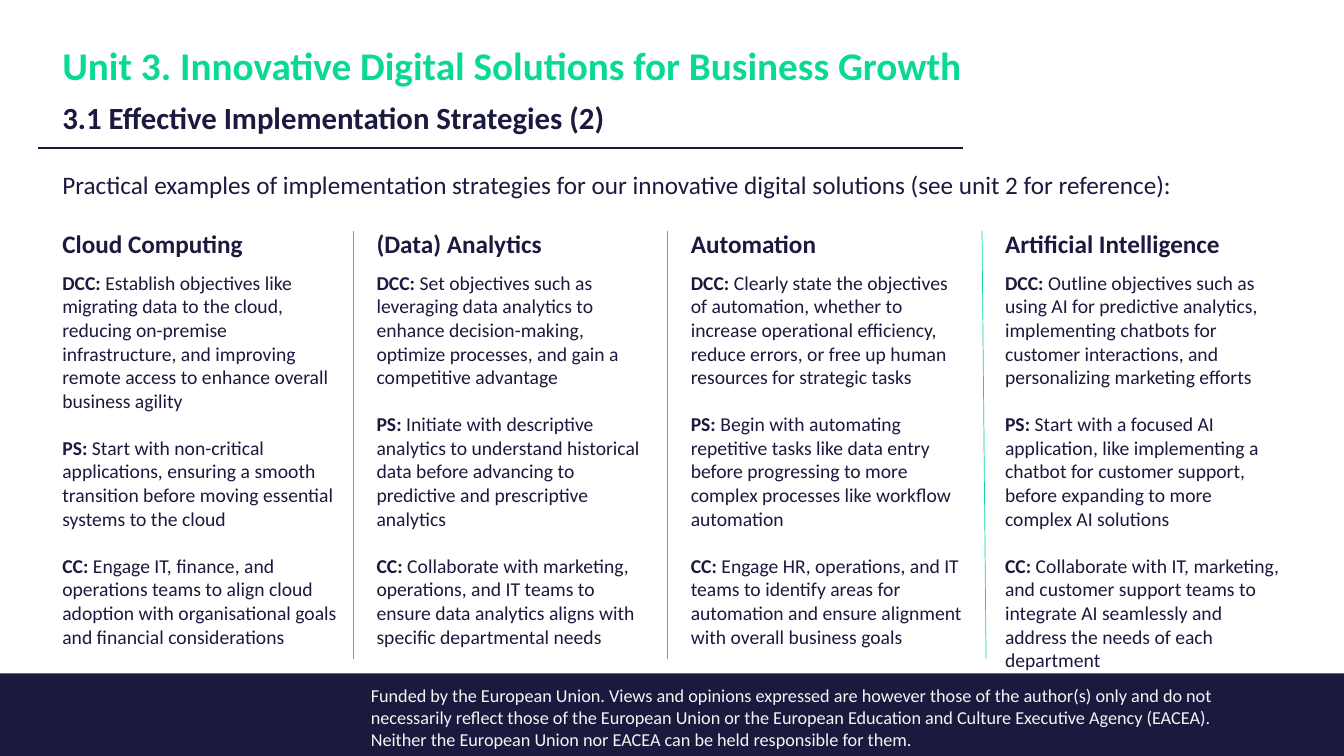
from lxml.etree import SubElement
from pptx import Presentation
from pptx.dml.color import RGBColor
from pptx.enum.shapes import MSO_CONNECTOR, MSO_SHAPE
from pptx.enum.text import MSO_ANCHOR, PP_ALIGN
from pptx.oxml.ns import qn
from pptx.util import Inches, Pt

COLORS = {"navy": "1B193E", "green": "0AD995", "pale": "F5F5F5"}

TOPICS = [
    ("Cloud Computing", [
        ("DCC:", "Establish objectives like migrating data to the cloud, reducing on-premise "
                 "infrastructure, and improving remote access to enhance overall business agility"),
        ("PS:", "Start with non-critical applications, ensuring a smooth transition before "
                "moving essential systems to the cloud"),
        ("CC:", "Engage IT, finance, and operations teams to align cloud adoption with "
                "organisational goals and financial considerations")]),
    ("(Data) Analytics", [
        ("DCC:", "Set objectives such as leveraging data analytics to enhance decision-making, "
                 "optimize processes, and gain a competitive advantage"),
        ("PS:", "Initiate with descriptive analytics to understand historical data before "
                "advancing to predictive and prescriptive analytics"),
        ("CC:", "Collaborate with marketing, operations, and IT teams to ensure data analytics "
                "aligns with specific departmental needs")]),
    ("Automation", [
        ("DCC:", "Clearly state the objectives of automation, whether to increase operational "
                 "efficiency, reduce errors, or free up human resources for strategic tasks"),
        ("PS:", "Begin with automating repetitive tasks like data entry before progressing to "
                "more complex processes like workflow automation"),
        ("CC:", "Engage HR, operations, and IT teams to identify areas for automation and "
                "ensure alignment with overall business goals")]),
    ("Artificial Intelligence", [
        ("DCC:", "Outline objectives such as using AI for predictive analytics, implementing "
                 "chatbots for customer interactions, and personalizing marketing efforts"),
        ("PS:", "Start with a focused AI application, like implementing a chatbot for customer "
                "support, before expanding to more complex AI solutions"),
        ("CC:", "Collaborate with IT, marketing, and customer support teams to integrate AI "
                "seamlessly and address the needs of each department")]),
]


def color(name):
    return RGBColor.from_string(COLORS[name])


def add_box(slide, left, top, width, height, anchor=MSO_ANCHOR.TOP):
    """Add a wrapping text box and return its text frame."""
    box = slide.shapes.add_textbox(Inches(left), Inches(top), Inches(width), Inches(height))
    frame = box.text_frame
    frame.word_wrap = True
    frame.vertical_anchor = anchor
    return frame


def write(frame, text, lead="", size=14, ink="navy", bold=False,
          before=0, spacing=None, align=PP_ALIGN.LEFT):
    """Write one paragraph, with an optional bold lead; an empty frame's first is used."""
    first = frame.paragraphs[0]
    para = frame.add_paragraph() if first.runs else first
    para.alignment = align
    para.space_before = Pt(before)
    if spacing:
        para.line_spacing = spacing
    parts = [(lead, True), (" " + text, bold)] if lead else [(text, bold)]
    for words, heavy in parts:
        run = para.add_run()
        run.text = words
        run.font.name = "Calibri"
        run.font.size = Pt(size)
        run.font.bold = heavy
        run.font.color.rgb = color(ink)


def add_line(slide, start, end, ink, weight):
    line = slide.shapes.add_connector(
        MSO_CONNECTOR.STRAIGHT, *(Inches(n) for n in (*start, *end)))
    line.line.color.rgb = color(ink)
    line.line.width = Pt(weight)
    SubElement(line._element.spPr, qn("a:effectLst"))


def add_footer(slide, left, top, width, height):
    band = slide.shapes.add_shape(
        MSO_SHAPE.RECTANGLE, Inches(left), Inches(top), Inches(width), Inches(height))
    band.shadow.inherit = False
    band.fill.solid()
    band.fill.fore_color.rgb = color("navy")
    band.line.fill.background()
    frame = add_box(slide, left + 3.58, top + 0.06, 8.84, height - 0.06)
    write(frame, "Funded by the European Union. Views and opinions expressed are however those "
          "of the author(s) only and do not necessarily reflect those of the European Union or "
          "the European Education and Culture Executive Agency (EACEA). Neither the European "
          "Union nor EACEA can be held responsible for them.", size=13, ink="pale")


def add_header(slide, left, top, width, height):
    frame = add_box(slide, left, top, width, height, MSO_ANCHOR.BOTTOM)
    write(frame, "Unit 3. Innovative Digital Solutions for Business Growth",
          size=28, ink="green", bold=True, spacing=0.9)
    write(frame, "3.1 Effective Implementation Strategies (2)",
          size=22, bold=True, before=10, spacing=0.9)
    rule = top + height + 0.07
    add_line(slide, (left - 0.14, rule), (left + 9.03, rule), "navy", 1)


def add_topic(slide, left, top, width, height, title, points):
    frame = add_box(slide, left, top, width, height)
    write(frame, title, size=18, bold=True)
    for i, (lead, text) in enumerate(points):
        write(frame, text, lead=lead, before=17 if i else 8.5)


def add_topics(slide, left, top, width, height):
    """Spread the topics over the width, with a divider between neighbours."""
    column = 2.94
    pitch = (width - column) / (len(TOPICS) - 1)
    for i, (title, points) in enumerate(TOPICS):
        x = left + i * pitch
        add_topic(slide, x, top, column, height, title, points)
        if i:
            edge = x - 0.13
            lean = 0.04 if i == len(TOPICS) - 1 else 0
            add_line(slide, (edge, top + 0.07), (edge + lean, top + 4.32), "green", 0.5)


def main():
    deck = Presentation()
    deck.slide_width, deck.slide_height = Inches(13.33), Inches(7.5)
    slide = deck.slides.add_slide(deck.slide_layouts[6])
    add_footer(slide, 0, 6.68, 13.33, 0.82)
    add_header(slide, 0.52, 0.5, 9.98, 0.9)
    intro = add_box(slide, 0.52, 1.63, 12.3, 0.4)
    write(intro, "Practical examples of implementation strategies for our innovative digital "
          "solutions (see unit 2 for reference):", size=18, align=PP_ALIGN.JUSTIFY)
    add_topics(slide, 0.52, 2.22, 12.29, 4.33)
    deck.save("out.pptx")


if __name__ == "__main__":
    main()
